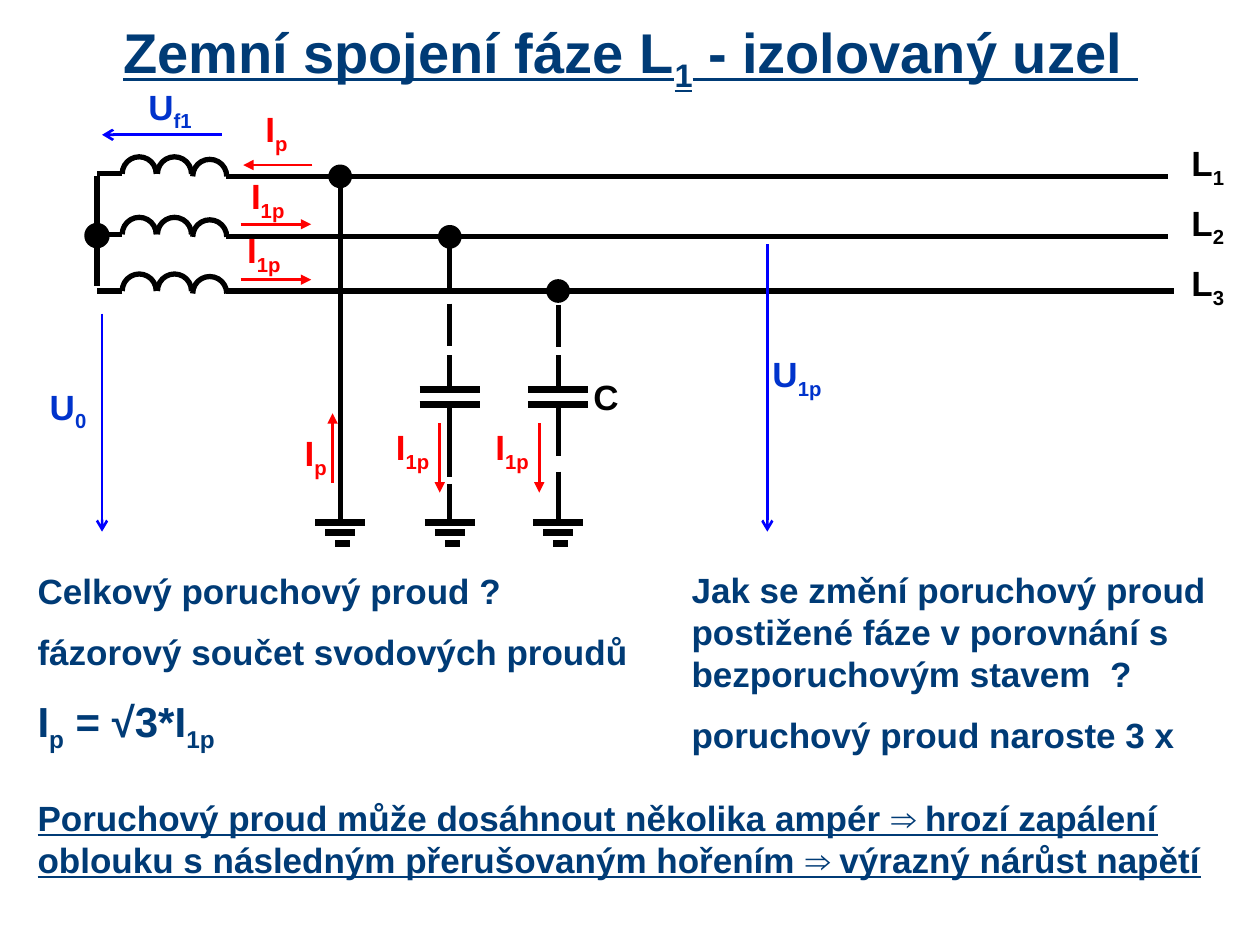
"""Build the slide on an earth fault of phase L1 in a network with isolated neutral."""
from dataclasses import dataclass
from typing import Optional

from lxml import etree
from pptx import Presentation
from pptx.dml.color import RGBColor
from pptx.enum.dml import MSO_LINE
from pptx.enum.shapes import MSO_CONNECTOR, MSO_SHAPE
from pptx.enum.text import MSO_ANCHOR, MSO_AUTO_SIZE, PP_ALIGN
from pptx.oxml.ns import qn
from pptx.util import Inches, Pt

STRAIGHT = MSO_CONNECTOR.STRAIGHT
ARC, OVAL = MSO_SHAPE.ARC, MSO_SHAPE.OVAL
DASH, LONG_DASH = MSO_LINE.DASH, MSO_LINE.LONG_DASH
MIDDLE, CENTER = MSO_ANCHOR.MIDDLE, PP_ALIGN.CENTER
NO_FIT, FIT_SHAPE = MSO_AUTO_SIZE.NONE, MSO_AUTO_SIZE.SHAPE_TO_FIT_TEXT
SUBSCRIPT = "-25000"


@dataclass(frozen=True)
class Theme:
    font: str = "Arial"
    navy: RGBColor = RGBColor(0x00, 0x3B, 0x76)
    voltage_text: RGBColor = RGBColor(0x00, 0x33, 0xCC)
    voltage: RGBColor = RGBColor(0x00, 0x00, 0xFF)
    current: RGBColor = RGBColor(0xFF, 0x00, 0x00)
    black: RGBColor = RGBColor(0x00, 0x00, 0x00)
    title: int = 32
    formula: int = 24
    body: int = 20
    arrow: float = 1.5
    dot: float = 2
    wire: float = 3
    plate: float = 4


THEME = Theme()


@dataclass(frozen=True)
class Line:
    x1: float
    y1: float
    x2: float
    y2: float
    width: float = THEME.wire
    color: RGBColor = THEME.black
    dash: Optional[MSO_LINE] = None
    head: Optional[str] = None


@dataclass(frozen=True)
class Label:
    text: str
    left: float
    top: float
    width: float
    color: RGBColor


@dataclass(frozen=True)
class Phase:
    name: str
    wire_y: float
    coil_y: float
    end_x: float
    label_y: float


@dataclass(frozen=True)
class Note:
    left: float
    top: float
    width: float
    height: float
    lines: tuple
    underline: bool = False


PHASES = (
    Phase("L_1", 1.4, 1.38, 9.27, 1.11),
    Phase("L_2", 1.88, 1.86, 9.27, 1.58),
    Phase("L_3", 2.31, 2.31, 9.32, 2.06),
)
NEUTRAL_X, COIL_X, COIL_PITCH, COIL_SIZE = 0.77, 0.97, 0.28, 0.27
FAULT_X, CAP2_X, CAP3_X = 2.7, 3.57, 4.43

BRANCHES = (
    Line(NEUTRAL_X, 2.27, NEUTRAL_X, 1.4),
    Line(FAULT_X, 1.48, FAULT_X, 3.84),
    Line(CAP2_X, 1.95, CAP2_X, 2.82, dash=LONG_DASH),
    Line(CAP3_X, 2.42, CAP3_X, 2.82, dash=LONG_DASH),
    Line(CAP2_X, 3.45, CAP2_X, 3.84, dash=LONG_DASH),
    Line(CAP3_X, 3.45, CAP3_X, 3.84, dash=DASH),
)
CURRENTS = ((2.64, 3.83, 2.64, 3.28), (2.48, 1.31, 1.93, 1.31), (1.91, 1.78, 2.47, 1.78),
            (1.91, 2.22, 2.47, 2.22), (3.49, 3.36, 3.49, 3.91), (4.28, 3.36, 4.28, 3.91))
VOLTAGES = ((0.81, 2.49, 0.81, 4.22), (1.76, 1.07, 0.81, 1.07), (6.09, 1.94, 6.09, 4.22))
LABELS = (
    Label("U_0", 0.35, 3.04, 0.38, THEME.voltage_text),
    Label("U_f1", 1.13, 0.66, 0.44, THEME.voltage_text),
    Label("U_1p", 6.08, 2.78, 0.49, THEME.voltage_text),
    Label("I_p", 2.06, 0.84, 0.27, THEME.current),
    Label("I_p", 2.37, 3.41, 0.27, THEME.current),
    Label("I_1p", 1.94, 1.37, 0.37, THEME.current),
    Label("I_1p", 1.91, 1.8, 0.37, THEME.current),
    Label("I_1p", 3.09, 3.36, 0.37, THEME.current),
    Label("I_1p", 3.88, 3.36, 0.37, THEME.current),
    Label("C", 4.67, 2.94, 0.28, THEME.black),
)
NOTES = (
    Note(0.2, 4.47, 5.04, 1.56, (
        ("Celkový poruchový proud ?", THEME.body),
        ("fázorový součet svodových proudů", THEME.body),
        ("I_p_ = √3*I_1p", THEME.formula))),
    Note(5.39, 4.46, 4.41, 1.63, (
        ("Jak se změní poruchový proud postižené fáze v porovnání s "
         "bezporuchovým stavem  ?", THEME.body),
        ("poruchový proud naroste 3 x", THEME.body))),
    Note(0.2, 6.27, 9.61, 0.8, (
        ("Poruchový proud může dosáhnout několika ampér ⇒ hrozí zapálení oblouku "
         "s následným přerušovaným hořením ⇒ výrazný nárůst napětí", THEME.body),), True),
)


def write(p, text: str, size: float, color: RGBColor, underline: bool = False) -> None:
    """Fill a paragraph, setting every second part between underscores as subscript."""
    for i, part in enumerate(text.split("_")):
        r = p.add_run()
        r.text = part
        r.font.name, r.font.size, r.font.bold = THEME.font, Pt(size), True
        r.font.color.rgb = color
        r.font.underline = underline
        if i % 2:
            r.font._element.set("baseline", SUBSCRIPT)


def add_line(s, line: Line) -> None:
    """Draw a straight line with optional dash and arrowhead."""
    cx = s.shapes.add_connector(STRAIGHT, *map(Inches, (line.x1, line.y1, line.x2, line.y2)))
    cx.line.color.rgb = line.color
    cx.line.width = Pt(line.width)
    if line.dash:
        cx.line.dash_style = line.dash
    sp_pr = cx.element.spPr
    if line.head:
        etree.SubElement(sp_pr.find(qn("a:ln")), qn("a:tailEnd"), type=line.head)
    etree.SubElement(sp_pr, qn("a:effectLst"))


def add_round(s, kind: MSO_SHAPE, left: float, top: float, size: float, width: float):
    """Add a black outlined shape in a square frame."""
    sp = s.shapes.add_shape(kind, *map(Inches, (left, top, size, size)))
    sp.shadow.inherit = False
    sp.line.color.rgb = THEME.black
    sp.line.width = Pt(width)
    return sp


def add_dot(s, x: float, y: float, width: float = THEME.dot) -> None:
    """Mark a junction centred on a point."""
    sp = add_round(s, OVAL, x - 0.08, y - 0.08, 0.16, width)
    sp.fill.solid()
    sp.fill.fore_color.rgb = THEME.black


def add_label(s, label: Label) -> None:
    """Add a centred one-line symbol."""
    sp = s.shapes.add_textbox(*map(Inches, (label.left, label.top, label.width, 0.41)))
    tf = sp.text_frame
    tf.word_wrap, tf.auto_size, tf.vertical_anchor = False, FIT_SHAPE, MIDDLE
    tf.margin_left = tf.margin_right = tf.margin_top = tf.margin_bottom = Inches(0.04)
    tf.paragraphs[0].alignment = CENTER
    write(tf.paragraphs[0], label.text, THEME.body, label.color)


def add_phase(s, phase: Phase) -> None:
    """Draw one phase: winding, conductor and name."""
    add_line(s, Line(COIL_X, phase.coil_y, NEUTRAL_X, phase.coil_y))
    for i, drop in enumerate((0, 0, 0.02)):
        top = phase.coil_y + drop - COIL_SIZE / 2
        sp = add_round(s, ARC, COIL_X + i * COIL_PITCH, top, COIL_SIZE, THEME.wire)
        sp.fill.background()
        sp.adjustments[0], sp.adjustments[1] = 108, 0
    add_line(s, Line(1.79, phase.wire_y, phase.end_x, phase.wire_y))
    add_label(s, Label(phase.name, 9.39, phase.label_y, 0.39, THEME.black))


def add_bar(s, x: float, y: float, half: float) -> None:
    """Draw a thick horizontal bar centred on a point."""
    add_line(s, Line(x - half, y, x + half, y, THEME.plate))


def add_capacitor(s, x: float) -> None:
    """Draw a capacitor with its two leads."""
    for y in (3.09, 3.21):
        add_bar(s, x, y, 0.24)
    add_line(s, Line(x, 2.82, x, 3.06))
    add_line(s, Line(x, 3.21, x, 3.45))


def add_ground(s, x: float) -> None:
    """Draw an earth symbol with its lead."""
    add_line(s, Line(x, 3.84, x, 4.15))
    for dx, y, half in ((0, 4.15, 0.2), (0, 4.23, 0.12), (0.02, 4.31, 0.06)):
        add_bar(s, x + dx, y, half)


def add_note(s, note: Note) -> None:
    """Add a block of body paragraphs."""
    sp = s.shapes.add_textbox(*map(Inches, (note.left, note.top, note.width, note.height)))
    tf = sp.text_frame
    tf.word_wrap, tf.auto_size = True, FIT_SHAPE
    for i, (text, size) in enumerate(note.lines):
        p = tf.add_paragraph() if i else tf.paragraphs[0]
        if i:
            p.space_before = Pt(size * 0.55)
        write(p, text, size, THEME.navy, note.underline)


def add_title(s, text: str) -> None:
    """Place and format the title placeholder."""
    sp = s.shapes.title
    sp.left, sp.top, sp.width, sp.height = map(Inches, (0.2, 0.06, 9.61, 0.77))
    tf = sp.text_frame
    tf.auto_size, tf.vertical_anchor = NO_FIT, MIDDLE
    tf.paragraphs[0].alignment = CENTER
    write(tf.paragraphs[0], text, THEME.title, THEME.navy, True)


def main() -> None:
    """Assemble the slide and save it."""
    prs = Presentation()
    prs.slide_width, prs.slide_height = Inches(10), Inches(7.5)
    s = prs.slides.add_slide(prs.slide_layouts[5])
    add_title(s, "Zemní spojení fáze L_1_ - izolovaný uzel ")
    for note in NOTES:
        add_note(s, note)
    for phase in PHASES:
        add_phase(s, phase)
    for branch in BRANCHES:
        add_line(s, branch)
    add_dot(s, NEUTRAL_X, 1.87, THEME.wire)
    for x, phase in zip((FAULT_X, CAP2_X, CAP3_X), PHASES):
        add_dot(s, x, phase.wire_y)
        add_ground(s, x)
    for x in (CAP2_X, CAP3_X):
        add_capacitor(s, x)
    for ends in CURRENTS:
        add_line(s, Line(*ends, THEME.arrow, THEME.current, head="triangle"))
    for ends in VOLTAGES:
        add_line(s, Line(*ends, THEME.arrow, THEME.voltage, head="arrow"))
    for label in LABELS:
        add_label(s, label)
    prs.save("out.pptx")


if __name__ == "__main__":
    main()
